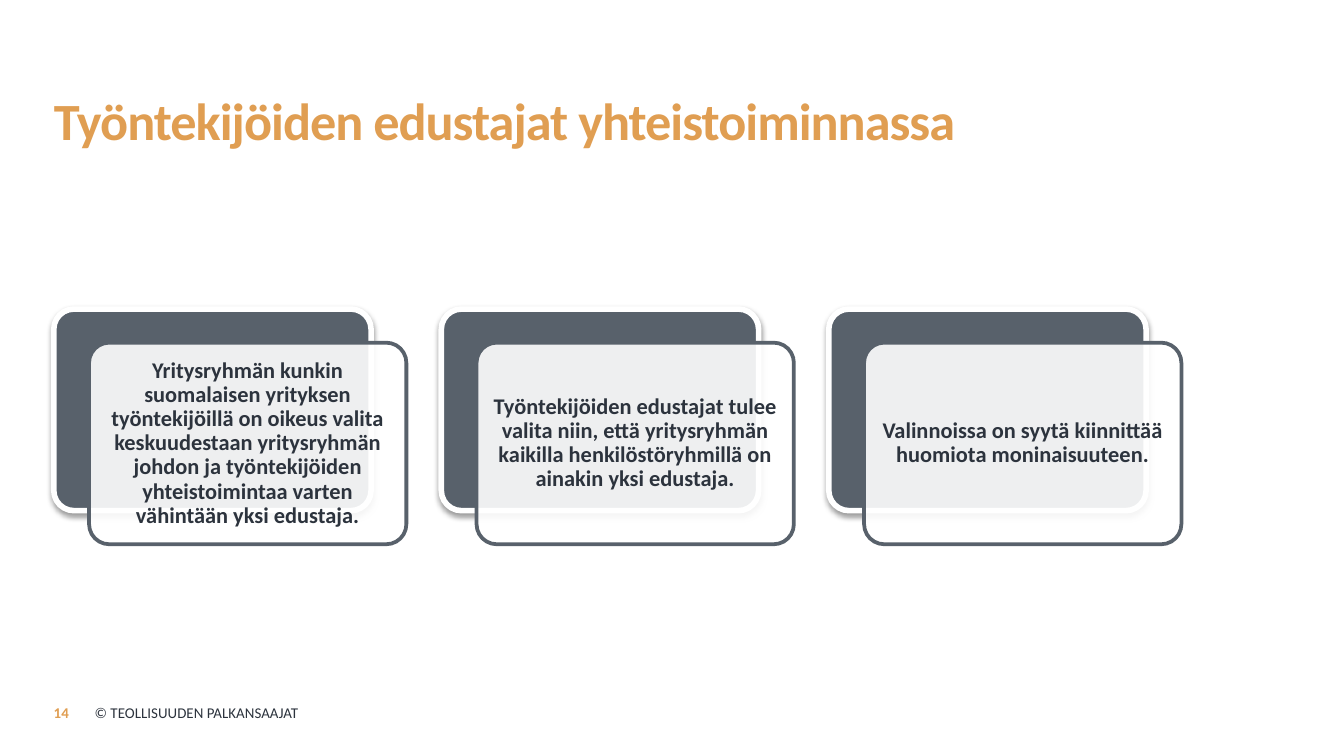
from lxml import etree
from pptx import Presentation
from pptx.dml.color import RGBColor
from pptx.enum.shapes import MSO_SHAPE
from pptx.enum.text import MSO_ANCHOR, PP_ALIGN
from pptx.oxml.ns import qn
from pptx.util import Pt

ROUNDED = MSO_SHAPE.ROUNDED_RECTANGLE
MIDDLE, BOTTOM = MSO_ANCHOR.MIDDLE, MSO_ANCHOR.BOTTOM
LEFT, CENTER = PP_ALIGN.LEFT, PP_ALIGN.CENTER

TITLE = "Työntekijöiden edustajat yhteistoiminnassa"
CARDS = [
    "Yritysryhmän kunkin suomalaisen yrityksen työntekijöillä on oikeus valita "
    "keskuudestaan yritysryhmän johdon ja työntekijöiden yhteistoimintaa varten "
    "vähintään yksi edustaja.",
    "Työntekijöiden edustajat tulee valita niin, että yritysryhmän kaikilla "
    "henkilöstöryhmillä on ainakin yksi edustaja.",
    "Valinnoissa on syytä kiinnittää huomiota moninaisuuteen.",
]
PAGE_NUMBER = "14"
COPYRIGHT = "© TEOLLISUUDEN PALKANSAAJAT"

FONT = "Calibri"
ORANGE, SLATE, INK, WHITE = "E09E52", "58616B", "2C333D", "FFFFFF"
MARGIN = 28.8
CARD_WIDTH, CARD_HEIGHT, CARD_TOP = 170, 108, 165.6
CARD_PITCH = 207.6
FRONT_SHIFT_X, FRONT_SHIFT_Y = 18.9, 18
FOOTER_TOP, FOOTER_HEIGHT = 370.8, 21.6


def color(value):
    return RGBColor.from_string(value)


def write(box, text, size, ink, bold, align, anchor, side_inset, edge_inset):
    frame = box.text_frame
    frame.text = text
    frame.word_wrap = True
    frame.vertical_anchor = anchor
    frame.margin_left = frame.margin_right = Pt(side_inset)
    frame.margin_top = frame.margin_bottom = Pt(edge_inset)
    paragraph = frame.paragraphs[0]
    paragraph.alignment = align
    font = paragraph.runs[0].font
    font.name, font.size, font.bold = FONT, Pt(size), bold
    font.color.rgb = color(ink)
    return paragraph


def add_card(slide, left, top, fill, line, line_width):
    card = slide.shapes.add_shape(ROUNDED, Pt(left), Pt(top), Pt(CARD_WIDTH), Pt(CARD_HEIGHT))
    card.adjustments[0] = 0.1
    card.shadow.inherit = False
    card.fill.solid()
    card.fill.fore_color.rgb = color(fill)
    card.line.color.rgb = color(line)
    card.line.width = Pt(line_width)
    return card


def set_alpha(color_element, percent):
    etree.SubElement(color_element, qn("a:alpha"), val=str(percent * 1000))


def add_soft_shadow(card):
    effects = card.element.spPr.find(qn("a:effectLst"))
    shadow = etree.SubElement(
        effects, qn("a:outerShdw"), blurRad=str(Pt(3.1)), dist=str(Pt(1.6)),
        dir="5400000", rotWithShape="0")
    set_alpha(etree.SubElement(shadow, qn("a:srgbClr"), val="000000"), 38)


def add_footer(slide, text, left, width, ink, bold):
    box = slide.shapes.add_textbox(Pt(left), Pt(FOOTER_TOP), Pt(width), Pt(FOOTER_HEIGHT))
    write(box, text, 8, ink, bold, LEFT, MIDDLE, 0, 3.6)


presentation = Presentation()
presentation.slide_width, presentation.slide_height = Pt(720), Pt(405)
slide = presentation.slides.add_slide(presentation.slide_layouts[5])

title = slide.shapes.title
title.left, title.top, title.width, title.height = Pt(MARGIN), Pt(16.6), Pt(556.6), Pt(67.7)
heading = write(title, TITLE, 28, ORANGE, True, LEFT, BOTTOM, 0, 3.6)
heading.line_spacing = Pt(27)
heading.runs[0].font._element.set("spc", "-50")

for index, text in enumerate(CARDS):
    left = MARGIN + index * CARD_PITCH
    back = add_card(slide, left, CARD_TOP, SLATE, WHITE, 3)
    add_soft_shadow(back)
    front = add_card(slide, left + FRONT_SHIFT_X, CARD_TOP + FRONT_SHIFT_Y, WHITE, SLATE, 2)
    set_alpha(front.element.spPr.find(qn("a:solidFill"))[0], 90)
    statement = write(front, text, 12, INK, True, CENTER, MIDDLE, 3.6, 3.6)
    statement.line_spacing = 0.9

add_footer(slide, PAGE_NUMBER, MARGIN, 20, ORANGE, True)
add_footer(slide, COPYRIGHT, 50.7, 228, INK, False)

presentation.save("out.pptx")
